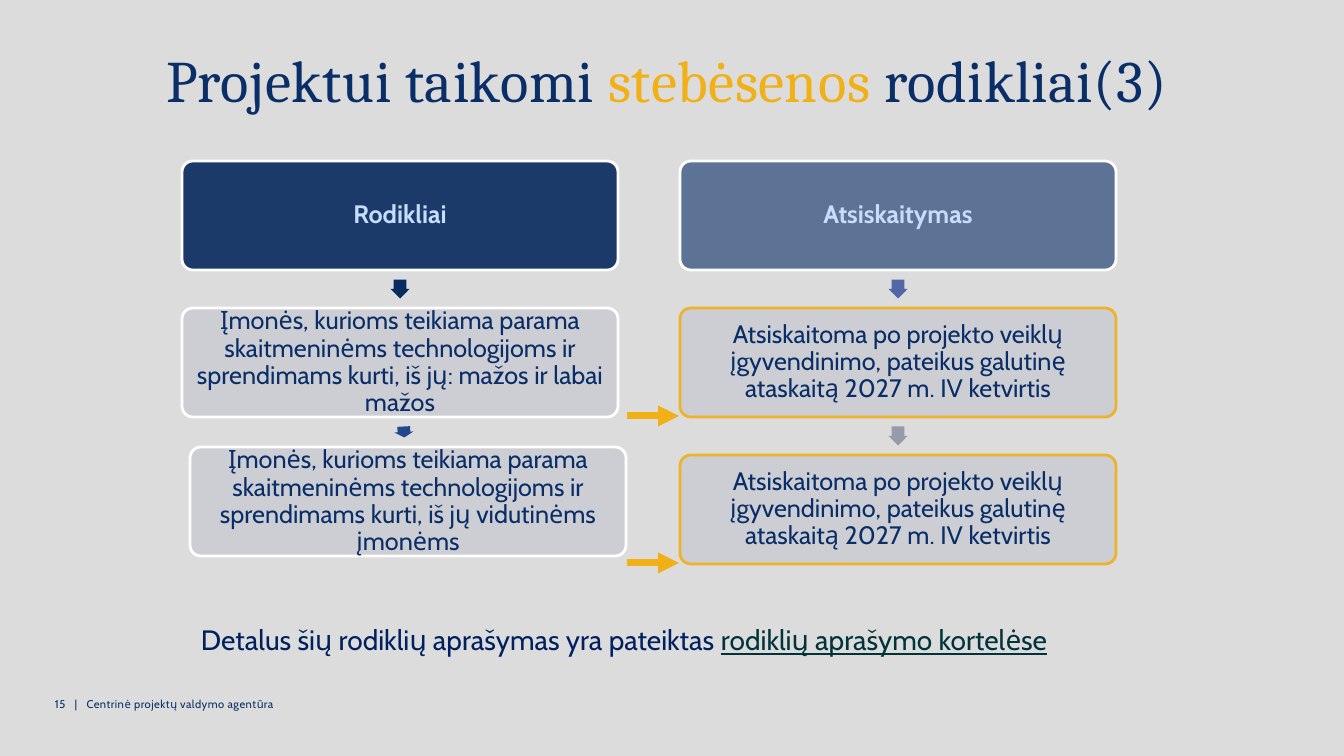
from math import atan2, degrees

from lxml import etree
from pptx import Presentation
from pptx.dml.color import RGBColor
from pptx.enum.shapes import MSO_CONNECTOR, MSO_SHAPE
from pptx.enum.text import MSO_ANCHOR, PP_ALIGN
from pptx.oxml.ns import qn
from pptx.util import Pt

ROUNDED, ARROW = MSO_SHAPE.ROUNDED_RECTANGLE, MSO_SHAPE.RIGHT_ARROW
STRAIGHT = MSO_CONNECTOR.STRAIGHT
LEFT, CENTER = PP_ALIGN.LEFT, PP_ALIGN.CENTER
TOP, MIDDLE = MSO_ANCHOR.TOP, MSO_ANCHOR.MIDDLE

GREY = RGBColor(0xDC, 0xDC, 0xDC)
NAVY = RGBColor(0x09, 0x2E, 0x68)
BODY_NAVY = RGBColor(0x09, 0x2D, 0x67)
HEAD_NAVY = RGBColor(0x08, 0x29, 0x5D)
NOTE_NAVY = RGBColor(0x00, 0x20, 0x60)
LINK_GREEN = RGBColor(0x01, 0x33, 0x3B)
GOLD = RGBColor(0xF0, 0xB0, 0x16)
WHITE = RGBColor(0xFF, 0xFF, 0xFF)
PALE_BLUE = RGBColor(0xC5, 0xDE, 0xFF)
PANEL = RGBColor(0xCC, 0xCD, 0xD3)
ARROW_DARK = RGBColor(0x09, 0x2B, 0x62)
ARROW_BLUE = RGBColor(0x24, 0x46, 0x8D)
ARROW_LIGHT = RGBColor(0x52, 0x67, 0xA7)
ARROW_GREY = RGBColor(0x97, 0x9A, 0xA8)

# Content: text pieces with their colours
TITLE = [("Projektui taikomi ", NAVY), ("stebėsenos", GOLD), (" rodikliai(3)", NAVY)]
FOOTER = [("15   |   Centrinė projektų valdymo agentūra", NAVY)]
NOTE = [("Detalus šių rodiklių aprašymas yra pateiktas ", NOTE_NAVY),
        ("rodiklių aprašymo kortelėse", LINK_GREEN)]
REPORT = ("Atsiskaitoma po projekto veiklų įgyvendinimo, pateikus galutinę "
          "ataskaitą 2027 m. IV ketvirtis")
SUPPORT = "Įmonės, kurioms teikiama parama skaitmeninėms technologijoms ir sprendimams kurti, iš jų"
COLUMNS = [
    {"head": "Rodikliai", "left": 182, "head_alpha": 90, "head_fill": HEAD_NAVY,
     "line": WHITE, "line_alpha": 100, "arrows": [(ARROW_DARK, 19), (ARROW_BLUE, 11)],
     "items": [SUPPORT + ": mažos ir labai mažos", SUPPORT + " vidutinėms įmonėms"],
     "last_shift": (8, -8)},
    {"head": "Atsiskaitymas", "left": 680, "head_alpha": 60, "head_fill": BODY_NAVY,
     "line": GOLD, "line_alpha": 90, "arrows": [(ARROW_LIGHT, 19), (ARROW_GREY, 19)],
     "items": [REPORT, REPORT], "last_shift": (0, 0)},
]

# Layout in px
PAGE_W, PAGE_H = 1344, 756
SCALE = 12192000 / PAGE_W
BOX_W, BOX_H, FIRST_TOP, PITCH = 436, 109, 161, 147
ARROW_BREADTH = 19
LINK_LEFT, LINK_RIGHT = 627, 679


def px(*lengths):
    return [round(length * SCALE) for length in lengths]


def set_alpha(fill_parent, percent):
    if percent < 100:
        color = fill_parent.find(qn("a:solidFill"))[0]
        etree.SubElement(color, qn("a:alpha")).set("val", str(percent * 1000))


def write(box, pieces, font, para_format=None, frame_format=None, spacing=0):
    frame = box.text_frame
    for name, value in {"word_wrap": True, **(frame_format or {})}.items():
        setattr(frame, name, value)
    para = frame.paragraphs[0]
    for name, value in (para_format or {}).items():
        setattr(para, name, value)
    for text, color in pieces:
        span = para.add_run()
        span.text = text
        for name, value in font.items():
            setattr(span.font, name, value)
        span.font.color.rgb = color
        if spacing:
            span.font._element.set("spc", str(spacing))
    return para


def add_panel(page, left, top, text, fill, alpha, line, line_alpha, color, bold):
    panel = page.shapes.add_shape(ROUNDED, *px(left, top, BOX_W, BOX_H))
    panel.shadow.inherit = False
    panel.adjustments[0] = 0.1
    panel.fill.solid()
    panel.fill.fore_color.rgb = fill
    panel.line.color.rgb = line
    panel.line.width = Pt(2)
    set_alpha(panel._element.spPr, alpha)
    set_alpha(panel.line._ln, line_alpha)
    inset = px(3)[0]
    frame_format = {"vertical_anchor": MIDDLE, "margin_left": inset, "margin_right": inset,
                    "margin_top": inset, "margin_bottom": inset}
    write(panel, [(text, color)], {"name": "Cabin", "size": Pt(18), "bold": bold},
          {"alignment": CENTER, "line_spacing": 0.9}, frame_format)


def add_step_arrow(page, start, end, color, length):
    # Midway in the gap, pointing from one panel to the next
    (x1, y1), (x2, y2) = start, end
    x, y = (x1 + x2 + BOX_W) / 2, (y1 + BOX_H + y2) / 2
    arrow = page.shapes.add_shape(
        ARROW, *px(x - length / 2, y - ARROW_BREADTH / 2, length, ARROW_BREADTH))
    arrow.shadow.inherit = False
    arrow.rotation = round(degrees(atan2(y2 - y1, x2 - x1)), 1)
    arrow.adjustments[0], arrow.adjustments[1] = 0.667, 0.5
    arrow.fill.solid()
    arrow.fill.fore_color.rgb = color
    arrow.line.fill.background()


def add_link(page, y):
    link = page.shapes.add_connector(STRAIGHT, *px(LINK_LEFT, y, LINK_RIGHT, y))
    link.line.color.rgb = GOLD
    link.line.width = Pt(5)
    etree.SubElement(link.line._ln, qn("a:tailEnd")).set("type", "triangle")
    etree.SubElement(link._element.spPr, qn("a:effectLst"))


def main():
    deck = Presentation()
    deck.slide_width, deck.slide_height = px(PAGE_W, PAGE_H)
    page = deck.slides.add_slide(deck.slide_layouts[5])
    page.background.fill.solid()
    page.background.fill.fore_color.rgb = GREY

    # Title
    title = page.shapes.title
    title.left, title.top, title.width, title.height = px(156, 52, 1121, 80)
    write(title, TITLE, {"name": "Cambria", "size": Pt(42)},
          {"alignment": LEFT, "line_spacing": 0.8, "space_after": Pt(12)},
          {"vertical_anchor": TOP}, spacing=40)

    # Footer
    footer = page.shapes.add_textbox(*px(45, 692, 323, 40))
    write(footer, FOOTER, {"name": "Cabin", "size": Pt(8)}, spacing=30)

    # Two columns of panels with arrows between the steps
    for column in COLUMNS:
        spots = [(column["left"], FIRST_TOP + row * PITCH) for row in range(3)]
        shift_x, shift_y = column["last_shift"]
        spots[-1] = (spots[-1][0] + shift_x, spots[-1][1] + shift_y)
        add_panel(page, *spots[0], column["head"], column["head_fill"],
                  column["head_alpha"], WHITE, 100, PALE_BLUE, True)
        for spot, text in zip(spots[1:], column["items"]):
            add_panel(page, *spot, text, PANEL, 90, column["line"],
                      column["line_alpha"], BODY_NAVY, False)
        for start, end, (color, length) in zip(spots, spots[1:], column["arrows"]):
            add_step_arrow(page, start, end, color, length)

    # Links from indicators to reporting
    for row in (1, 2):
        add_link(page, FIRST_TOP + row * PITCH + BOX_H - 1)

    # Closing note
    note = page.shapes.add_textbox(*px(191, 618, 1017, 109))
    para = write(note, NOTE, {"name": "Cabin", "size": Pt(20)})
    para.runs[-1].font.underline = True

    deck.save("out.pptx")


if __name__ == "__main__":
    main()
